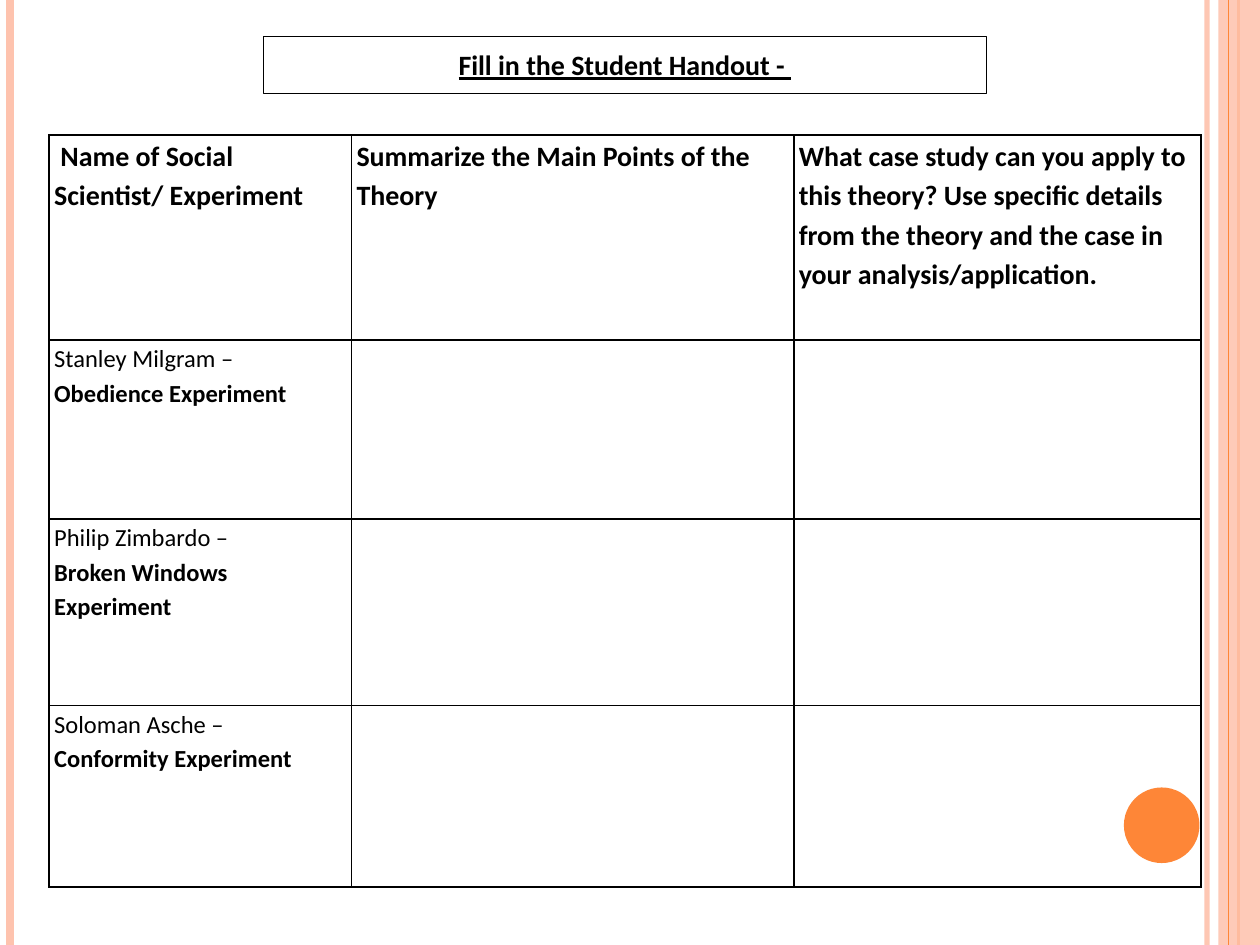
from dataclasses import dataclass

from lxml.etree import SubElement
from pptx import Presentation
from pptx.dml.color import RGBColor
from pptx.enum.shapes import MSO_CONNECTOR as Connector, MSO_SHAPE as Shape
from pptx.enum.text import MSO_ANCHOR as Anchor, PP_ALIGN as Align
from pptx.oxml.ns import qn
from pptx.util import Inches, Pt


@dataclass(frozen=True)
class Theme:
    font: str = "Calibri"
    ink: str = "000000"
    paper: str = "FFFFFF"
    orange: str = "FE8637"
    peach: str = "FEC3AE"
    heading: int = 16
    body: int = 14


THEME = Theme()
HEADERS = [
    "\u00a0Name of Social Scientist/ Experiment".replace("\u00a0", " "),
    "Summarize the Main Points of the Theory",
    "What case study can you apply to this theory? Use specific details "
    "from the theory and the case in your analysis/application.",
]
EXPERIMENTS = [
    ("Stanley Milgram –", "Obedience Experiment"),
    ("Philip Zimbardo –", "Broken Windows Experiment"),
    ("Soloman Asche –", "Conformity Experiment"),
]
COLUMN_WIDTHS = [2.4, 3.51, 3.23]
ROW_HEIGHTS = [1.63, 1.42, 1.48, 1.44]


def color(value):
    return RGBColor.from_string(value)


def set_alpha(fill_parent, percent):
    for tint in fill_parent.iter(qn("a:srgbClr")):
        SubElement(tint, qn("a:alpha"), val=str(percent * 1000))


def write(para, text, size=THEME.body, bold=False, underline=False,
          align=Align.LEFT, after=0):
    para.alignment = align
    para.line_spacing = 1.15
    para.space_after = Pt(after)
    span = para.add_run()
    span.text = text
    span.font.name = THEME.font
    span.font.size = Pt(size)
    span.font.bold = bold
    span.font.underline = underline
    span.font.color.rgb = color(THEME.ink)


def add_stripe(page, x, tint, width, alpha=None):
    stripe = page.shapes.add_connector(
        Connector.STRAIGHT, Inches(x), Inches(0), Inches(x), Inches(7.5))
    stripe.line.color.rgb = color(tint)
    stripe.line.width = Pt(width)
    properties = stripe._element.spPr
    SubElement(properties, qn("a:effectLst"))
    if alpha:
        set_alpha(properties, alpha)


def add_block(page, kind, bounds, fill, line=None, alpha=None):
    block = page.shapes.add_shape(kind, *map(Inches, bounds))
    block.shadow.inherit = False
    block.fill.solid()
    block.fill.fore_color.rgb = color(fill)
    if alpha:
        set_alpha(block._element.spPr, alpha)
    if line:
        block.line.color.rgb = color(line)
        block.line.width = Pt(0.75)
    else:
        block.line.fill.background()
    return block


def add_decoration(page):
    add_stripe(page, 9.58, THEME.peach, 3, alpha=93)
    add_stripe(page, 0.08, THEME.peach, 4.5)
    add_stripe(page, 9.83, THEME.orange, 1.5)
    add_block(page, Shape.RECTANGLE, (9.67, 0, 0.33, 7.5), THEME.peach, alpha=87)
    add_stripe(page, 9.75, THEME.orange, 0.75)
    add_block(page, Shape.OVAL, (8.92, 6.25, 0.6, 0.6), THEME.orange)


def format_cell(cell):
    cell.margin_left = cell.margin_right = Inches(0.04)
    cell.margin_top = cell.margin_bottom = 0
    cell.vertical_anchor = Anchor.TOP
    properties = cell._tc.get_or_add_tcPr()
    for side in ("lnL", "lnR", "lnT", "lnB"):
        border = SubElement(properties, qn(f"a:{side}"), w=str(Pt(1)))
        fill = SubElement(border, qn("a:solidFill"))
        SubElement(fill, qn("a:srgbClr"), val=THEME.ink)
    cell.fill.background()


def add_handout_table(page):
    frame = page.shapes.add_table(
        len(ROW_HEIGHTS), len(COLUMN_WIDTHS), Inches(0.39), Inches(1.07),
        Inches(sum(COLUMN_WIDTHS)), Inches(sum(ROW_HEIGHTS)))
    table = frame.table
    table.first_row = table.horz_banding = False
    for column, width in zip(table.columns, COLUMN_WIDTHS):
        column.width = Inches(width)
    for row, height in zip(table.rows, ROW_HEIGHTS):
        row.height = Inches(height)
    for cell in table.iter_cells():
        format_cell(cell)
    for index, text in enumerate(HEADERS):
        write(table.cell(0, index).text_frame.paragraphs[0], text,
              size=THEME.heading, bold=True, after=10)
    for index, (scientist, experiment) in enumerate(EXPERIMENTS, start=1):
        text_frame = table.cell(index, 0).text_frame
        write(text_frame.paragraphs[0], scientist)
        write(text_frame.add_paragraph(), experiment, bold=True)


def add_title(page):
    box = add_block(page, Shape.RECTANGLE, (2.09, 0.29, 5.74, 0.45),
                    THEME.paper, line=THEME.ink)
    box.text_frame.word_wrap = True
    box.text_frame.vertical_anchor = Anchor.TOP
    write(box.text_frame.paragraphs[0], "Fill in the Student Handout - ",
          size=THEME.heading, bold=True, underline=True,
          align=Align.CENTER, after=10)


def main():
    deck = Presentation()
    deck.slide_width, deck.slide_height = Inches(10), Inches(7.5)
    page = deck.slides.add_slide(deck.slide_layouts[6])
    add_decoration(page)
    add_handout_table(page)
    add_title(page)
    deck.save("out.pptx")


if __name__ == "__main__":
    main()
